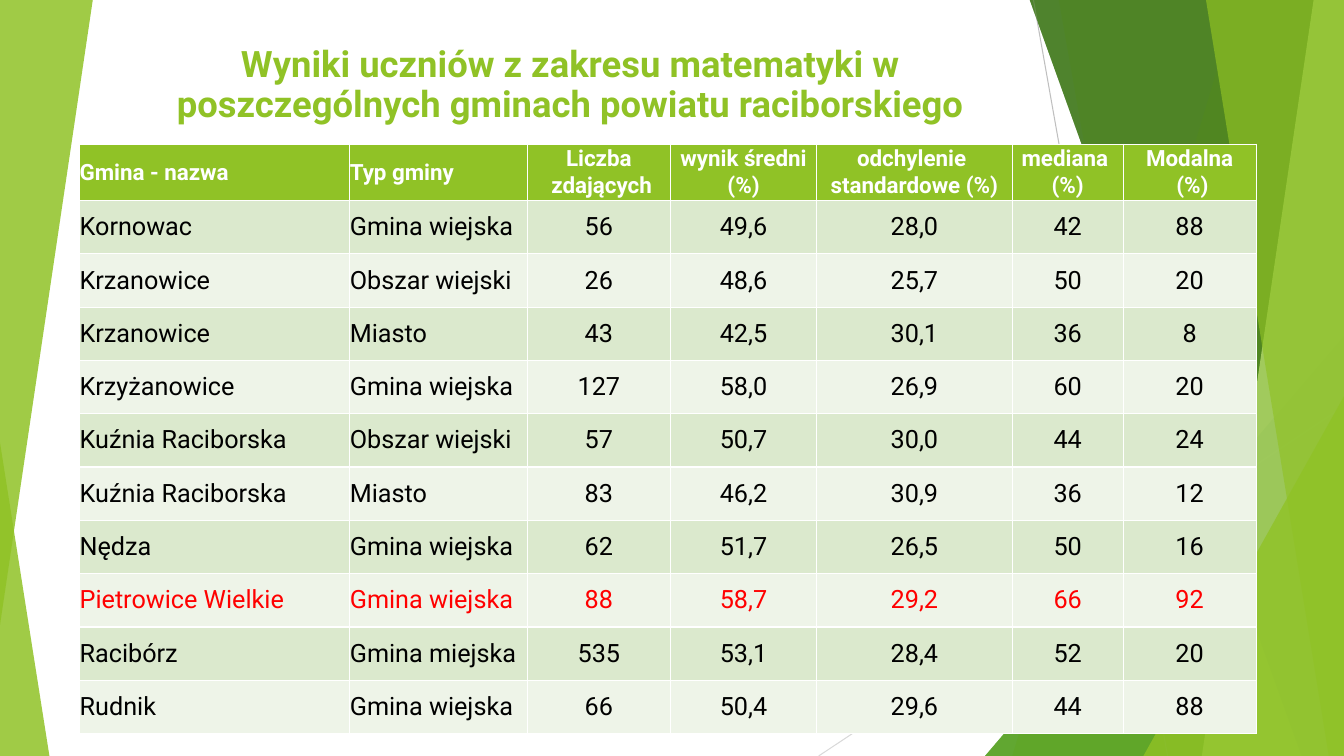
from lxml import etree
from pptx import Presentation
from pptx import util as u
from pptx.dml.color import RGBColor
from pptx.enum import shapes, text
from pptx.oxml import ns

FONT = "Roboto"
COLORS = {
    "lime": "90C226", "green": "54A021", "forest": "3F7819", "pale": "C0E474",
    "line_dark": "BFBFBF", "line_light": "D9D9D9", "band_dark": "DBE9CD",
    "band_light": "EEF4E8", "white": "FFFFFF", "black": "000000", "red": "FF0000",
}
TITLE = "Wyniki uczniów z zakresu matematyki w poszczególnych gminach powiatu raciborskiego"
COLUMN_WIDTHS = [2.68, 1.76, 1.42, 1.45, 1.94, 1.1, 1.32]
HEADER_HEIGHT = 0.56
HIGHLIGHTED = "Pietrowice Wielkie"
ROWS = [
    ["Gmina - nazwa", "Typ gminy", "Liczba\n zdających", "wynik średni (%)",
     "odchylenie \nstandardowe (%)", "mediana \n(%)", "Modalna\n (%)"],
    ["Kornowac", "Gmina wiejska", "56", "49,6", "28,0", "42", "88"],
    ["Krzanowice", "Obszar wiejski", "26", "48,6", "25,7", "50", "20"],
    ["Krzanowice", "Miasto", "43", "42,5", "30,1", "36", "8"],
    ["Krzyżanowice", "Gmina wiejska", "127", "58,0", "26,9", "60", "20"],
    ["Kuźnia Raciborska", "Obszar wiejski", "57", "50,7", "30,0", "44", "24"],
    ["Kuźnia Raciborska", "Miasto", "83", "46,2", "30,9", "36", "12"],
    ["Nędza", "Gmina wiejska", "62", "51,7", "26,5", "50", "16"],
    ["Pietrowice Wielkie", "Gmina wiejska", "88", "58,7", "29,2", "66", "92"],
    ["Racibórz", "Gmina miejska", "535", "53,1", "28,4", "52", "20"],
    ["Rudnik", "Gmina wiejska", "66", "50,4", "29,6", "44", "88"],
]


def color(name):
    """Return the named palette colour."""
    return RGBColor.from_string(COLORS[name])


def paint(shape, fill, opacity):
    """Give a shape a translucent fill without line or shadow."""
    shape.shadow.inherit = False
    shape.line.fill.background()
    shape.fill.solid()
    shape.fill.fore_color.rgb = color(fill)
    tint = shape.fill._xPr.find(".//" + ns.qn("a:srgbClr"))
    etree.SubElement(tint, ns.qn("a:alpha"), val=str(opacity * 1000))


def add_triangle(slide, box, apex, fill, opacity, rotation=0):
    """Draw a right triangle whose apex is at 0 (left) or 1 (right)."""
    shape = slide.shapes.add_shape(
        shapes.MSO_SHAPE.ISOSCELES_TRIANGLE, *(u.Inches(length) for length in box))
    shape.adjustments[0] = apex
    shape.rotation = rotation
    paint(shape, fill, opacity)


def add_facet(slide, box, top_x, bottom_x, fill, opacity):
    """Draw a panel with a slanted left edge against the right side of the box."""
    left, top, width, height = box
    right, bottom = left + width, top + height
    corners = [(left + top_x, top), (right, top), (right, bottom), (left + bottom_x, bottom)]
    points = [(u.Inches(x), u.Inches(y)) for x, y in corners]
    builder = slide.shapes.build_freeform(*points[0], scale=1.0)
    builder.add_line_segments(points[1:], close=True)
    paint(builder.convert_to_shape(), fill, opacity)


def add_right_facets(slide, box):
    """Layer the green panels along the right side."""
    left, top, width, height = box
    right, bottom = left + width, top + height
    add_facet(slide, box, 2.51, 0.27, "lime", 30)
    add_facet(slide, box, 0.73, 2.06, "lime", 20)
    add_triangle(slide, (left, bottom - 4.17, width, 4.17), 1, "green", 72)
    add_facet(slide, box, 0.44, 3.14, "forest", 70)
    add_facet(slide, box, 3.26, 2.15, "pale", 70)
    add_facet(slide, box, 2.19, 3.41, "lime", 65)
    add_triangle(slide, (right - 1.99, bottom - 3.57, 1.99, 3.57), 1, "lime", 80)


def add_hairline(slide, start, end, stroke):
    """Draw a thin straight line."""
    line = slide.shapes.add_connector(
        shapes.MSO_CONNECTOR.STRAIGHT, *(u.Inches(value) for value in start + end))
    line.line.color.rgb = color(stroke)
    line.line.width = u.Pt(0.75)
    etree.SubElement(line._element.spPr, ns.qn("a:effectLst"))


def add_background(slide, box):
    """Draw the doubled facets, the left wedges and the hairlines."""
    left, top, width, height = box
    right, bottom = left + width, top + height
    facets = (right - 3.56, top - 0.01, 3.56, height + 0.01)
    add_right_facets(slide, facets)
    add_triangle(slide, (left, bottom - 3.11, 0.49, 3.11), 0, "lime", 85)
    add_hairline(slide, (right - 3.08, top), (right - 1.75, bottom), "line_dark")
    add_hairline(slide, (right, top + 4.03), (right - 5.21, bottom), "line_light")
    add_right_facets(slide, facets)
    add_triangle(slide, (left, top, 0.92, 6.2), 1, "lime", 85, rotation=180)


def format_paragraph(paragraph, size, font_color, bold, centered):
    """Align a paragraph and style its runs."""
    paragraph.alignment = text.PP_ALIGN.CENTER if centered else text.PP_ALIGN.LEFT
    for run in paragraph.runs:
        run.font.name = FONT
        run.font.size = u.Pt(size)
        run.font.bold = bold
        run.font.color.rgb = color(font_color)


def add_title(slide, box):
    """Place the heading at the bottom of its box."""
    frame = slide.shapes.add_textbox(*(u.Inches(length) for length in box)).text_frame
    frame.word_wrap = True
    frame.vertical_anchor = text.MSO_ANCHOR.BOTTOM
    frame.text = TITLE
    frame.paragraphs[0].line_spacing = 0.9
    format_paragraph(frame.paragraphs[0], 26, "lime", True, True)


def fill_cell(cell, content, fill, size, font_color, bold, centered):
    """Write and style one table cell."""
    cell.text_frame.text = content
    cell.margin_left = cell.margin_right = cell.margin_top = cell.margin_bottom = 0
    cell.vertical_anchor = text.MSO_ANCHOR.MIDDLE
    cell.fill.solid()
    cell.fill.fore_color.rgb = color(fill)
    for paragraph in cell.text_frame.paragraphs:
        format_paragraph(paragraph, size, font_color, bold, centered)


def add_results_table(slide, box):
    """Build the banded table of results by municipality."""
    table = slide.shapes.add_table(
        len(ROWS), len(COLUMN_WIDTHS), *(u.Inches(length) for length in box)).table
    for column, width in zip(table.columns, COLUMN_WIDTHS):
        column.width = u.Inches(width)
    body_height = (box[3] - HEADER_HEIGHT) / (len(ROWS) - 1)
    for row_index, values in enumerate(ROWS):
        header = row_index == 0
        table.rows[row_index].height = u.Inches(HEADER_HEIGHT if header else body_height)
        if header:
            style = ("lime", 16, "white", True)
        else:
            band = "band_dark" if row_index % 2 else "band_light"
            style = (band, 18, "red" if values[0] == HIGHLIGHTED else "black", False)
        for column_index, value in enumerate(values):
            fill_cell(table.cell(row_index, column_index), value, *style, column_index > 1)


def main():
    """Create the slide and save the presentation."""
    presentation = Presentation()
    presentation.slide_width = u.Inches(13.33)
    presentation.slide_height = u.Inches(7.5)
    slide = presentation.slides.add_slide(presentation.slide_layouts[6])
    add_background(slide, (0, 0, 13.33, 7.5))
    add_title(slide, (1.13, 0.09, 9.06, 1.2))
    add_results_table(slide, (0.79, 1.43, 11.67, 5.85))
    presentation.save("out.pptx")


if __name__ == "__main__":
    main()
